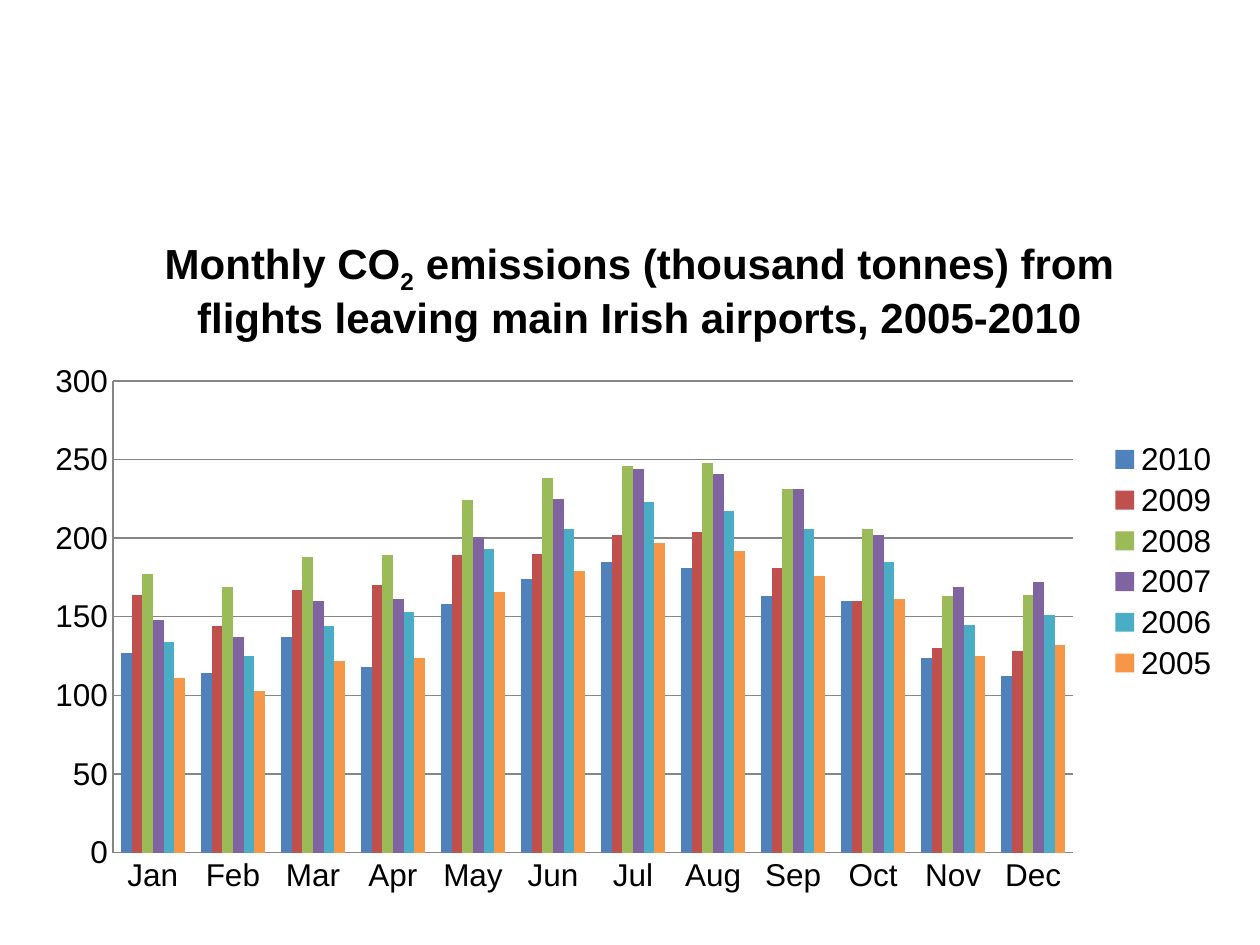
from lxml import etree
from pptx import Presentation
from pptx.chart.data import CategoryChartData as Data
from pptx.dml.color import RGBColor as RGB
from pptx.enum.chart import XL_CHART_TYPE as Kind
from pptx.enum.chart import XL_LEGEND_POSITION as Side
from pptx.enum.chart import XL_TICK_MARK as Tick
from pptx.oxml.ns import qn
from pptx.util import Pt

TITLE = [  # text, subscript
    ("Monthly CO", False),
    ("2", True),
    (" emissions (thousand tonnes) from flights leaving main Irish airports, 2005-2010", False),
]
MONTHS = "Jan Feb Mar Apr May Jun Jul Aug Sep Oct Nov Dec".split()
YEARS = {
    "2010": (127, 114, 137, 118, 158, 174, 185, 181, 163, 160, 124, 112),
    "2009": (164, 144, 167, 170, 189, 190, 202, 204, 181, 160, 130, 128),
    "2008": (177, 169, 188, 189, 224, 238, 246, 248, 231, 206, 163, 164),
    "2007": (148, 137, 160, 161, 201, 225, 244, 241, 231, 202, 169, 172),
    "2006": (134, 125, 144, 153, 193, 206, 223, 217, 206, 185, 145, 151),
    "2005": (111, 103, 122, 124, 166, 179, 197, 192, 176, 161, 125, 132),
}
THEME = {
    "font": "Arial",
    "text": "000000",
    "line": "868686",
    "bars": ("4F81BD", "C0504D", "9BBB59", "8064A2", "4BACC6", "F79646"),
    "title": 24,
    "label": 18,
}


def style(font, size, bold=False):
    font.name = THEME["font"]
    font.size = Pt(size)
    font.bold = bold
    font.color.rgb = RGB.from_string(THEME["text"])


def rule(line):
    line.color.rgb = RGB.from_string(THEME["line"])
    line.width = Pt(0.75)


def place(part, after=None, inner=False, **spots):
    """Give a chart part a manual layout, in fractions of the chart's size."""
    for old in part.findall(qn("c:layout")):
        part.remove(old)
    layout = etree.Element(qn("c:layout"))
    manual = etree.SubElement(layout, qn("c:manualLayout"))
    items = [("layoutTarget", "inner")] if inner else []
    items += [("xMode", "edge"), ("yMode", "edge"), *spots.items()]
    for tag, val in items:
        etree.SubElement(manual, qn("c:" + tag)).set("val", str(val))
    if after:
        part.find(qn(after)).addnext(layout)
    else:
        part.insert(0, layout)


def add_title(chart):
    chart.has_title = True
    title = chart.chart_title
    para = title.text_frame.paragraphs[0]
    for text, sub in TITLE:
        run = para.add_run()
        run.text = text
        style(run.font, THEME["title"], bold=True)
        if sub:
            run.font._element.set("baseline", "-25000")
    place(title._element, after="c:tx", x=0.11, y=0.03)


def add_axes(chart):
    for axis in (chart.category_axis, chart.value_axis):
        axis.major_tick_mark = axis.minor_tick_mark = Tick.NONE
        style(axis.tick_labels.font, THEME["label"])
        rule(axis.format.line)
    axis = chart.value_axis
    axis.minimum_scale, axis.maximum_scale, axis.major_unit = 0, 300, 50
    axis.tick_labels.number_format = "0"
    axis.tick_labels.number_format_is_linked = False
    axis.has_major_gridlines = True
    rule(axis.major_gridlines.format.line)


def add_legend(chart):
    chart.has_legend = True
    legend = chart.legend
    legend.position = Side.RIGHT
    legend.include_in_layout = False
    style(legend.font, THEME["label"])
    place(legend._element, after="c:legendPos", x=0.9, y=0.32, w=0.09, h=0.36)


def main():
    deck = Presentation()
    deck.slide_width, deck.slide_height = Pt(720), Pt(540)
    slide = deck.slides.add_slide(deck.slide_layouts[6])

    data = Data(number_format="0")
    data.categories = MONTHS
    for year, vals in YEARS.items():
        data.add_series(year, vals)
    box = [Pt(n) for n in (16.5, 122.5, 686, 396.5)]
    chart = slide.shapes.add_chart(Kind.COLUMN_CLUSTERED, *box, data).chart
    style(chart.font, THEME["label"])

    plot = chart.plots[0]
    plot.gap_width, plot.overlap, plot.vary_by_categories = 150, 0, False
    for bars, color in zip(plot.series, THEME["bars"]):
        bars.format.fill.solid()
        bars.format.fill.fore_color.rgb = RGB.from_string(color)

    add_title(chart)
    add_axes(chart)
    add_legend(chart)
    area = chart._chartSpace.chart.plotArea
    place(area, inner=True, x=0.07, y=0.24, w=0.8, h=0.68)
    deck.save("out.pptx")


if __name__ == "__main__":
    main()
